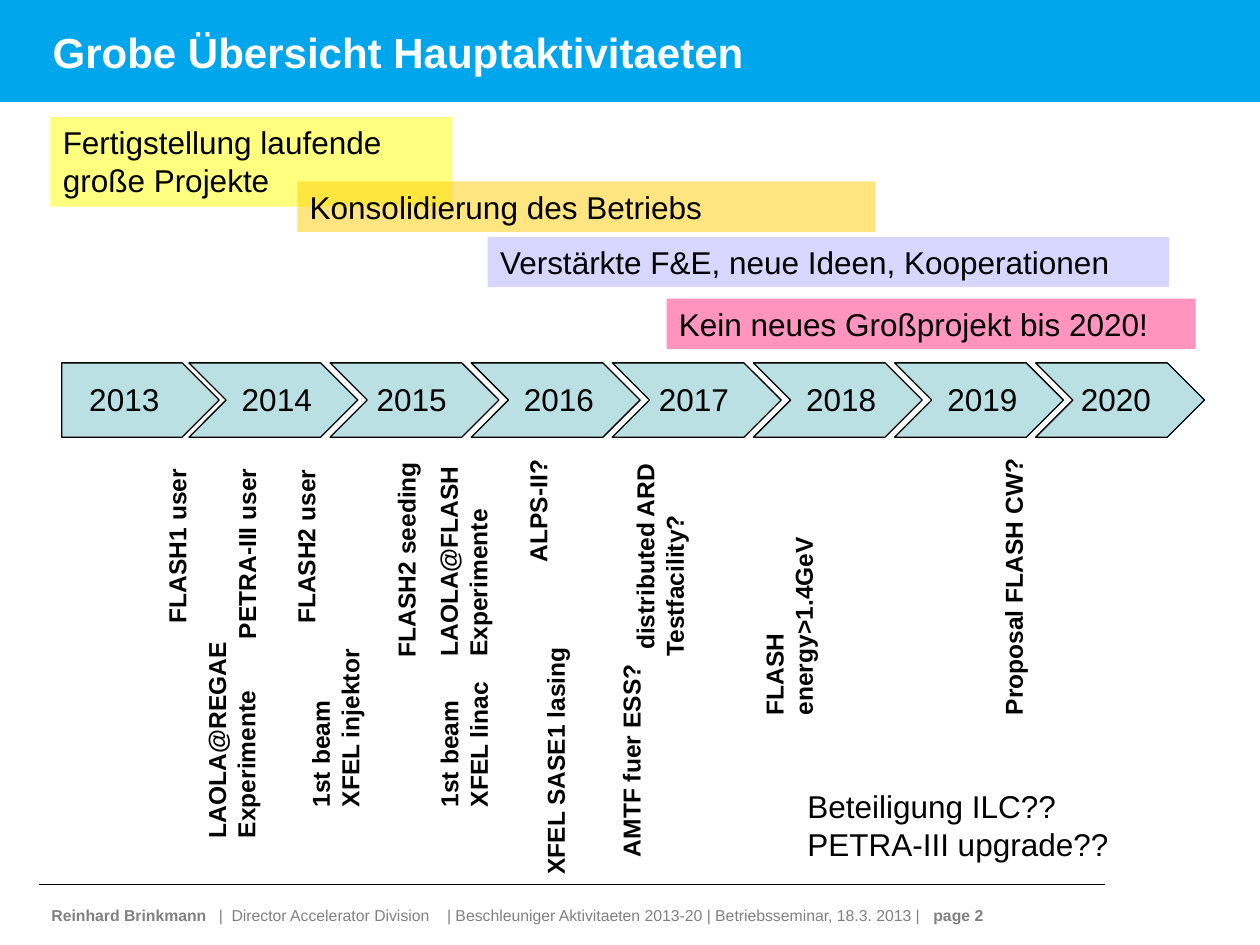
from lxml.etree import SubElement
from pptx import Presentation
from pptx.dml.color import RGBColor
from pptx.enum.shapes import MSO_CONNECTOR, MSO_SHAPE
from pptx.enum.text import MSO_ANCHOR, PP_ALIGN
from pptx.oxml.ns import qn
from pptx.util import Inches, Pt

BLACK = "000000"
WHITE = "FFFFFF"
HEADER_BLUE = "00A6EB"
ARROW_BLUE = "BBE0E3"
FOOTER_GRAY = "808080"

YEAR_LEFTS = [0.61, 1.82, 2.89, 4.06, 5.13, 6.3, 7.42, 8.48]

THEMES = [
    ("Fertigstellung laufende große Projekte", 0.4, 0.93, 3.19, 0.71, "FFFF00", 50),
    ("Konsolidierung des Betriebs", 2.36, 1.44, 4.59, 0.4, "FFCC00", 50),
    ("Verstärkte F&E, neue Ideen, Kooperationen", 3.87, 1.88, 5.41, 0.4, "9999FF", 40),
    ("Kein neues Großprojekt bis 2020!", 5.29, 2.37, 4.2, 0.4, "FF0066", 42),
]

MILESTONES = [
    ("FLASH2 user", 1.7, 4.15, 1.46, 0.34),
    ("PETRA-III user", 1.16, 4.2, 1.6, 0.34),
    ("1st beam XFEL injektor", 1.93, 5.49, 1.46, 0.57),
    ("1st beam XFEL linac", 2.95, 5.49, 1.46, 0.57),
    ("FLASH2 seeding", 2.3, 4.22, 1.85, 0.34),
    ("FLASH1 user", 0.67, 4.14, 1.47, 0.34),
    ("XFEL SASE1 lasing", 3.25, 5.71, 2.32, 0.34),
    ("LAOLA@FLASH Experimente", 2.75, 4.1, 1.85, 0.57),
    (" distributed ARD Testfacility?", 4.31, 4.1, 1.85, 0.57),
    ("LAOLA@REGAE\vExperimente", 0.93, 5.56, 1.81, 0.57),
    ("ALPS-II?", 3.72, 3.84, 1.1, 0.34),
    ("AMTF fuer ESS?", 4.03, 5.75, 1.96, 0.34),
    ("FLASH\venergy>1.4GeV", 4.99, 4.45, 2.31, 0.34),
    ("Proposal FLASH CW?", 6.89, 4.45, 2.31, 0.34),
]

FOOTER_RUNS = [
    ("Reinhard Brinkmann\t", True),
    ("|\tDirector Accelerator Division\t| Beschleuniger Aktivitaeten 2013-20"
     " | Betriebsseminar, 18.3. 2013 |\t", False),
    ("page 2", True),
]
FOOTER_TABS = [1.33, 1.43, 3.14, 6.89]


def rgb(color):
    return RGBColor.from_string(color)


def format_font(font, size, color=BLACK, bold=False):
    font.name = "Arial"
    font.size = Pt(size)
    font.bold = bold
    font.color.rgb = rgb(color)


def set_text(shape, text, size, color=BLACK, bold=False, anchor=MSO_ANCHOR.TOP):
    text_frame = shape.text_frame
    text_frame.word_wrap = True
    text_frame.vertical_anchor = anchor
    text_frame.text = text
    for paragraph in text_frame.paragraphs:
        paragraph.alignment = PP_ALIGN.LEFT
        for run in paragraph.runs:
            format_font(run.font, size, color, bold)


def add_text(shapes, text, left, top, width, height, size, **style):
    box = shapes.add_textbox(Inches(left), Inches(top), Inches(width), Inches(height))
    set_text(box, text, size, **style)
    return box


def add_block(shapes, kind, left, top, width, height, fill, opacity=100, outlined=False):
    shape = shapes.add_shape(kind, Inches(left), Inches(top), Inches(width), Inches(height))
    shape.shadow.inherit = False
    shape.fill.solid()
    shape.fill.fore_color.rgb = rgb(fill)
    if opacity < 100:
        color = shape.fill._xPr.find(f".//{qn('a:srgbClr')}")
        SubElement(color, qn("a:alpha"), val=str(opacity * 1000))
    if outlined:
        shape.line.color.rgb = rgb(BLACK)
        shape.line.width = Pt(0.75)
    else:
        shape.line.fill.background()
    return shape


def add_header(shapes):
    add_block(shapes, MSO_SHAPE.RECTANGLE, 0, 0, 10, 0.81, HEADER_BLUE)
    add_text(shapes, "Grobe Übersicht Hauptaktivitaeten", 0.32, 0.11, 9.32, 0.6, 24,
             color=WHITE, bold=True, anchor=MSO_ANCHOR.MIDDLE)


def add_footer(shapes):
    line = shapes.add_connector(MSO_CONNECTOR.STRAIGHT, Inches(0.31), Inches(7.02),
                                Inches(8.77), Inches(7.02))
    line.line.color.rgb = rgb(BLACK)
    line.line.width = Pt(0.25)
    SubElement(line._element.spPr, qn("a:effectLst"))

    box = shapes.add_textbox(Inches(0.31), Inches(7.09), Inches(8.46), Inches(0.3))
    text_frame = box.text_frame
    text_frame.word_wrap = True
    text_frame.vertical_anchor = MSO_ANCHOR.BOTTOM
    text_frame.margin_right = 0
    paragraph = text_frame.paragraphs[0]
    tab_list = SubElement(paragraph._p.get_or_add_pPr(), qn("a:tabLst"))
    for position in FOOTER_TABS:
        SubElement(tab_list, qn("a:tab"), pos=str(Inches(position)), algn="l")
    for text, bold in FOOTER_RUNS:
        run = paragraph.add_run()
        run.text = text
        format_font(run.font, 9, FOOTER_GRAY, bold)


def add_timeline(slide):
    shapes = slide.shapes.add_group_shape().shapes
    add_block(shapes, MSO_SHAPE.PENTAGON, 0.49, 2.88, 1.25, 0.59, ARROW_BLUE, outlined=True)
    for index in range(len(YEAR_LEFTS) - 1):
        add_block(shapes, MSO_SHAPE.CHEVRON, 1.5 + 1.12 * index, 2.88, 1.34, 0.59,
                  ARROW_BLUE, outlined=True)
    for year, left in enumerate(YEAR_LEFTS, start=2013):
        add_text(shapes, str(year), left, 2.97, 0.79, 0.4, 18)


def main():
    presentation = Presentation()
    presentation.slide_width = Inches(10)
    presentation.slide_height = Inches(7.5)
    slide = presentation.slides.add_slide(presentation.slide_layouts[6])
    shapes = slide.shapes

    add_header(shapes)
    add_footer(shapes)
    add_timeline(slide)
    for text, left, top, width, height, fill, opacity in THEMES:
        theme = add_block(shapes, MSO_SHAPE.RECTANGLE, left, top, width, height, fill, opacity)
        set_text(theme, text, 18)
    for text, left, top, width, height in MILESTONES:
        milestone = add_text(shapes, text, left, top, width, height, 14, bold=True)
        milestone.rotation = 270
    add_text(shapes, "Beteiligung ILC??\nPETRA-III upgrade??", 6.31, 6.2, 2.96, 0.71, 18)

    presentation.save("out.pptx")


if __name__ == "__main__":
    main()
